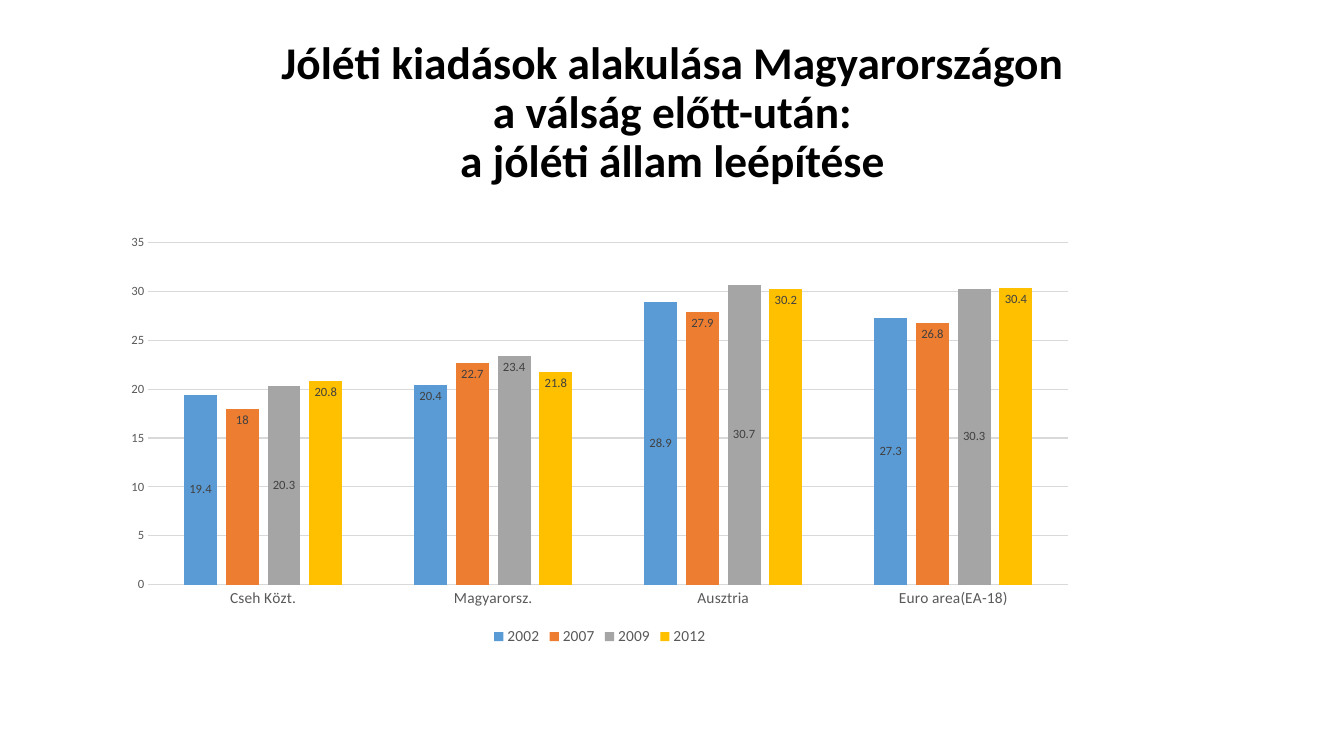
from pptx import Presentation
from pptx.chart.data import CategoryChartData
from pptx.dml.color import RGBColor
from pptx.enum.chart import XL_CHART_TYPE, XL_LEGEND_POSITION as LEGEND
from pptx.enum.chart import XL_LABEL_POSITION as LABEL, XL_TICK_MARK as TICK
from pptx.enum.text import MSO_ANCHOR, PP_ALIGN
from pptx.util import Inches, Pt

COLORS = {"title": "000000", "axis": "595959", "label": "404040", "grid": "D9D9D9",
          "2002": "5B9BD5", "2007": "ED7D31", "2009": "A5A5A5", "2012": "FFC000"}
COUNTRIES = ["Cseh Közt.", "Magyarorsz.", "Ausztria", "Euro area(EA-18)"]
SPENDING = {"2002": [19.4, 20.4, 28.9, 27.3],
            "2007": [18, 22.7, 27.9, 26.8],
            "2009": [20.3, 23.4, 30.7, 30.3],
            "2012": [20.8, 21.8, 30.2, 30.4]}
CENTERED_YEARS = ["2002", "2009"]
HUNGARY = COUNTRIES.index("Magyarorsz.")
TITLE_LINES = ["Jóléti kiadások alakulása Magyarországon",
               "a válság előtt-után:",
               "a jóléti állam leépítése"]


def set_font(font, size, color, bold=False):
    for name, value in {"name": "Calibri", "size": Pt(size), "bold": bold}.items():
        setattr(font, name, value)
    font.color.rgb = RGBColor.from_string(COLORS[color])


def set_line(line):
    line.color.rgb = RGBColor.from_string(COLORS["grid"])
    line.width = Pt(0.75)


prs = Presentation()
prs.slide_width, prs.slide_height = Inches(13.33), Inches(7.5)
s = prs.slides.add_slide(prs.slide_layouts[6])

tf = s.shapes.add_textbox(Inches(0.92), Inches(0.4), Inches(11.5), Inches(1.45)).text_frame
tf.word_wrap = True
tf.vertical_anchor = MSO_ANCHOR.MIDDLE
p = tf.paragraphs[0]
p.alignment = PP_ALIGN.CENTER
p.line_spacing = 0.9
for i, line in enumerate(TITLE_LINES):
    if i:
        p.add_line_break()
    r = p.add_run()
    r.text = line
    set_font(r.font, 32.4, "title", True)

data = CategoryChartData()
data.categories = COUNTRIES
for year, values in SPENDING.items():
    data.add_series(year, values)
chart = s.shapes.add_chart(XL_CHART_TYPE.COLUMN_CLUSTERED, Inches(1.11), Inches(2.25),
                           Inches(9.68), Inches(4.2), data).chart
set_font(chart.font, 10, "title")
chart.has_title = False
chart.has_legend = True
chart.legend.position = LEGEND.BOTTOM
chart.legend.include_in_layout = False
set_font(chart.legend.font, 11, "axis")

for axis, size in ((chart.category_axis, 11), (chart.value_axis, 9)):
    axis.major_tick_mark = axis.minor_tick_mark = TICK.NONE
    set_font(axis.tick_labels.font, size, "axis")
set_line(chart.category_axis.format.line)
chart.value_axis.format.line.fill.background()
set_line(chart.value_axis.major_gridlines.format.line)
chart.value_axis.minimum_scale = 0
chart.value_axis.maximum_scale = 35
chart.value_axis.major_unit = 5

plot = chart.plots[0]
for name, value in {"gap_width": 219, "overlap": -27, "vary_by_categories": False}.items():
    setattr(plot, name, value)
for series in plot.series:
    series.format.fill.solid()
    series.format.fill.fore_color.rgb = RGBColor.from_string(COLORS[series.name])
    series.invert_if_negative = False
    centered = series.name in CENTERED_YEARS
    labels = series.data_labels
    labels.show_value = True
    labels.position = LABEL.CENTER if centered else LABEL.INSIDE_END
    set_font(labels.font, 9, "label")
    if centered:
        label = series.points[HUNGARY].data_label
        set_font(label.font, 9, "label")
        label.position = LABEL.INSIDE_END

prs.save("out.pptx")
